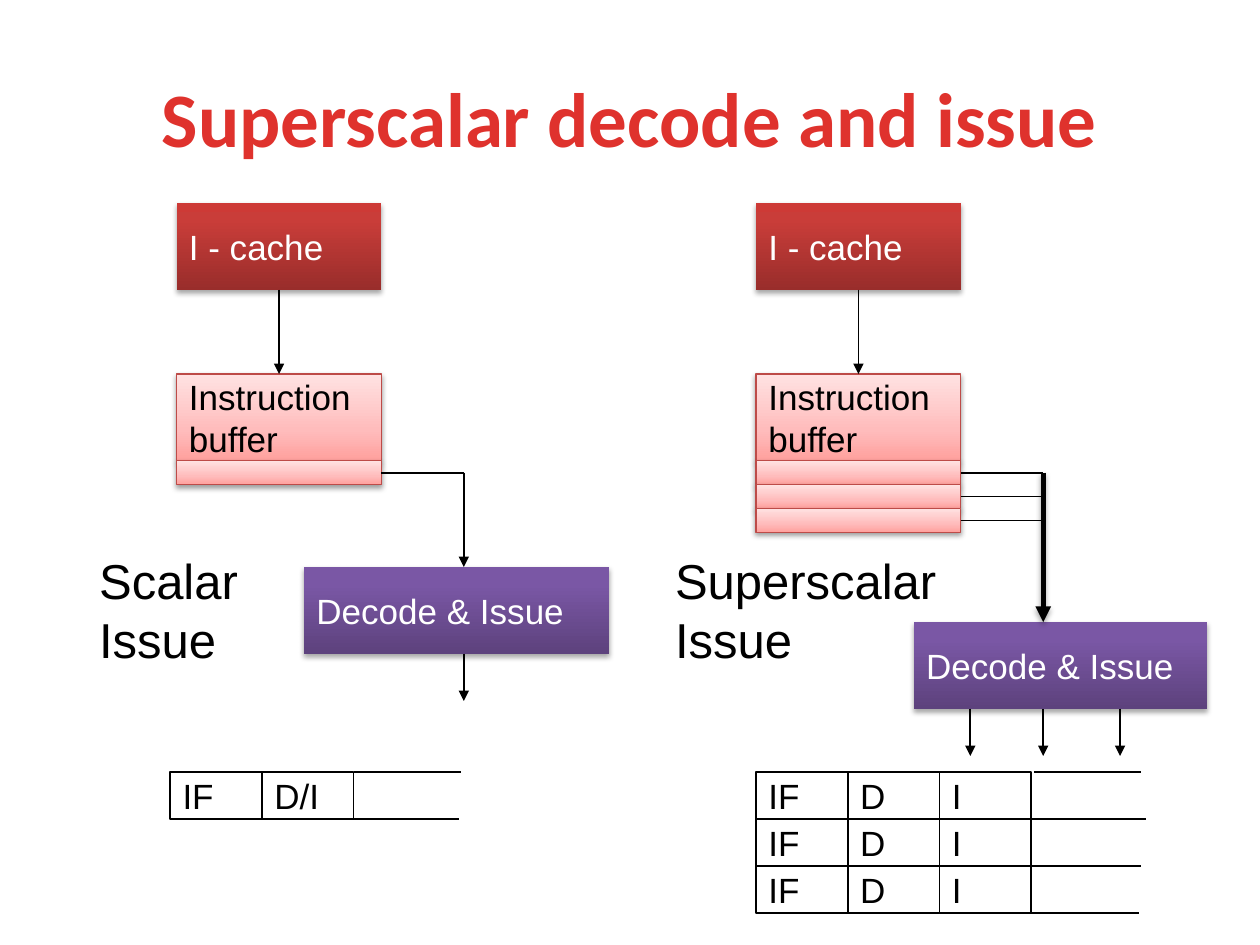
import copy

import pptx
import pptx.dml.color
import pptx.enum.dml
import pptx.enum.shapes
import pptx.enum.text
import pptx.oxml
import pptx.oxml.ns
import pptx.util
from pptx.dml.color import RGBColor
from pptx.util import Cm

BLACK = RGBColor(0x00, 0x00, 0x00)
WHITE = RGBColor(0xFF, 0xFF, 0xFF)
TITLE_RED = RGBColor(0xDF, 0x32, 0x2D)
BUFFER_EDGE = RGBColor(0xBD, 0x4B, 0x48)
RED_STOPS = [(0, RGBColor(0x99, 0x2D, 0x2B)), (0.8, RGBColor(0xC9, 0x3D, 0x39)),
             (1, RGBColor(0xCD, 0x3A, 0x36))]
PINK_STOPS = [(0, RGBColor(0xFF, 0xA0, 0x9D)), (0.35, RGBColor(0xFF, 0xBC, 0xBC)),
              (1, RGBColor(0xFF, 0xE2, 0xE2))]
PURPLE_STOPS = [(0, RGBColor(0x5D, 0x42, 0x7D)), (0.8, RGBColor(0x7A, 0x57, 0xA5)),
                (1, RGBColor(0x7A, 0x56, 0xA7))]

BLOCK_WIDTH, BLOCK_HEIGHT = 4.13, 1.75
CACHE_TOP, BUFFER_TOP = 4.09, 7.54
ENTRY_HEIGHT = 0.48
BUS_OFFSET = 5.79
CELL_TOP, CELL_WIDTH, CELL_HEIGHT = 15.56, 1.85, 0.95
TRAIL_LENGTH = 2.17


class SlideBuilder:
    FONT = "Arial"
    BODY_SIZE = 20
    LABEL_SIZE = 28

    def __init__(self, slide):
        self.slide = slide

    def set_text(self, shape, text, alignment=pptx.enum.text.PP_ALIGN.LEFT, **font_format):
        frame = shape.text_frame
        frame.word_wrap = True
        frame.text = text
        values = {"name": self.FONT, "size": pptx.util.Pt(self.BODY_SIZE), **font_format}
        color = values.pop("color", BLACK)
        for paragraph in frame.paragraphs:
            paragraph.alignment = alignment
            for name, value in values.items():
                setattr(paragraph.font, name, value)
            paragraph.font.color.rgb = color

    def text(self, text, left, top, width, height, anchor, **text_format):
        box = self.slide.shapes.add_textbox(Cm(left), Cm(top), Cm(width), Cm(height))
        box.text_frame.vertical_anchor = anchor
        self.set_text(box, text, **text_format)

    def label(self, text, left, top, width):
        self.text(text, left, top, width, 2.62, pptx.enum.text.MSO_ANCHOR.TOP,
                  size=pptx.util.Pt(self.LABEL_SIZE))

    def add_shadow(self, element, blur, distance, opacity):
        """Put a soft black shadow straight below a shape or connector."""
        effects = element.spPr.get_or_add_effectLst()
        effects.append(pptx.oxml.parse_xml(
            f'<a:outerShdw {pptx.oxml.ns.nsdecls("a")} blurRad="{pptx.util.Pt(blur)}" '
            f'dist="{pptx.util.Pt(distance)}" dir="5400000" rotWithShape="0">'
            f'<a:srgbClr val="000000"><a:alpha val="{opacity * 1000}"/></a:srgbClr>'
            '</a:outerShdw>'))

    def fill_gradient(self, shape, stops):
        """Fill upwards with the given (position, colour) stops."""
        shape.fill.gradient()
        shape.fill.gradient_angle = 90
        stop_list = shape._element.spPr.find(".//" + pptx.oxml.ns.qn("a:gsLst"))
        for _ in stops[2:]:
            stop_list.append(copy.deepcopy(stop_list[-1]))
        for stop, (position, color) in zip(shape.fill.gradient_stops, stops):
            stop.position = position
            stop.color.rgb = color

    def box(self, left, top, width, height, text="", stops=None, edge=None,
            edge_width=1, color=BLACK):
        shape = self.slide.shapes.add_shape(
            pptx.enum.shapes.MSO_SHAPE.RECTANGLE, Cm(left), Cm(top), Cm(width), Cm(height))
        shape.shadow.inherit = False
        if stops:
            self.fill_gradient(shape, stops)
            distance, opacity = (1.6, 38) if edge else (1.8, 35)
            self.add_shadow(shape._element, 3.1, distance, opacity)
        else:
            shape.fill.background()
        if edge is None:
            shape.line.fill.background()
        else:
            shape.line.color.rgb = edge
            shape.line.width = pptx.util.Pt(edge_width)
        if text:
            self.set_text(shape, text, color=color)

    def line(self, x1, y1, x2, y2, width=1, arrow=False, shadow=False):
        connector = self.slide.shapes.add_connector(
            pptx.enum.shapes.MSO_CONNECTOR.STRAIGHT, Cm(x1), Cm(y1), Cm(x2), Cm(y2))
        connector.line.color.rgb = BLACK
        connector.line.width = pptx.util.Pt(width)
        if arrow:
            connector.line._get_or_add_ln().append(pptx.oxml.parse_xml(
                f'<a:tailEnd {pptx.oxml.ns.nsdecls("a")} type="triangle"/>'))
        connector._element.spPr.get_or_add_effectLst()
        if shadow:
            self.add_shadow(connector._element, 3.1, 1.8, 35)

    def front_end(self, left, entry_count, decode, bus_width, issue_xs):
        """Draw cache, buffer with entries, and decoder; decode is (left, top, width)."""
        self.box(left, CACHE_TOP, BLOCK_WIDTH, BLOCK_HEIGHT, "I - cache", RED_STOPS, color=WHITE)
        self.box(left, BUFFER_TOP, BLOCK_WIDTH, BLOCK_HEIGHT, "Instruction\nbuffer",
                 PINK_STOPS, BUFFER_EDGE, 0.75)
        decode_left, decode_top, decode_width = decode
        self.box(decode_left, decode_top, decode_width, BLOCK_HEIGHT, "Decode & Issue",
                 PURPLE_STOPS, color=WHITE)
        center = left + BLOCK_WIDTH / 2
        self.line(center, CACHE_TOP + BLOCK_HEIGHT, center, BUFFER_TOP, arrow=True)

        bus_x = left + BUS_OFFSET
        entries_top = BUFFER_TOP + BLOCK_HEIGHT
        for index in range(entry_count):
            top = entries_top + index * ENTRY_HEIGHT
            middle = top + ENTRY_HEIGHT / 2
            self.box(left, top, BLOCK_WIDTH, ENTRY_HEIGHT, "", PINK_STOPS, BUFFER_EDGE, 0.75)
            self.line(left + BLOCK_WIDTH, middle, bus_x, middle)
        self.line(bus_x, entries_top + ENTRY_HEIGHT / 2, bus_x, decode_top,
                  bus_width, arrow=True, shadow=bus_width > 1)
        decode_bottom = decode_top + BLOCK_HEIGHT
        for x in issue_xs:
            self.line(x, decode_bottom, x, decode_bottom + 0.95, arrow=True)

    def pipeline(self, left, stages, trail_shifts):
        """Draw one row of stages per (top, bottom) shift of its open-ended last cell."""
        end = left + len(stages) * CELL_WIDTH
        for row, shifts in enumerate(trail_shifts):
            top = CELL_TOP + row * CELL_HEIGHT
            for column, stage in enumerate(stages):
                self.box(left + column * CELL_WIDTH, top, CELL_WIDTH, CELL_HEIGHT,
                         stage, edge=BLACK)
            for edge_index, shift in enumerate(shifts):
                y = top + edge_index * CELL_HEIGHT
                self.line(end + shift, y, end + shift + TRAIL_LENGTH, y)


def main():
    presentation = pptx.Presentation()
    presentation.slide_width, presentation.slide_height = Cm(25.4), Cm(19.05)
    builder = SlideBuilder(presentation.slides.add_slide(presentation.slide_layouts[6]))

    builder.text("Superscalar decode and issue", 1.27, 0.76, 22.86, 3.18,
                 pptx.enum.text.MSO_ANCHOR.MIDDLE, alignment=pptx.enum.text.PP_ALIGN.CENTER,
                 name="Calibri", size=pptx.util.Pt(44), bold=True, color=TITLE_RED)

    builder.front_end(3.56, 1, (6.13, 11.43, 6.15), 1, [9.35])
    builder.pipeline(3.43, ["IF", "D/I"], [(0, -0.05)])
    builder.label("Scalar\nIssue", 1.75, 10.97, 3.33)

    builder.front_end(15.24, 3, (18.42, 12.54, 5.91), 3, [19.56, 21.03, 22.58])
    builder.pipeline(15.24, ["IF", "D", "I"], [(0.05, 0.15), (-0.05, 0), (0.05, 0)])
    builder.label("Superscalar\nIssue", 13.36, 10.97, 5.85)

    presentation.save("out.pptx")


if __name__ == "__main__":
    main()
